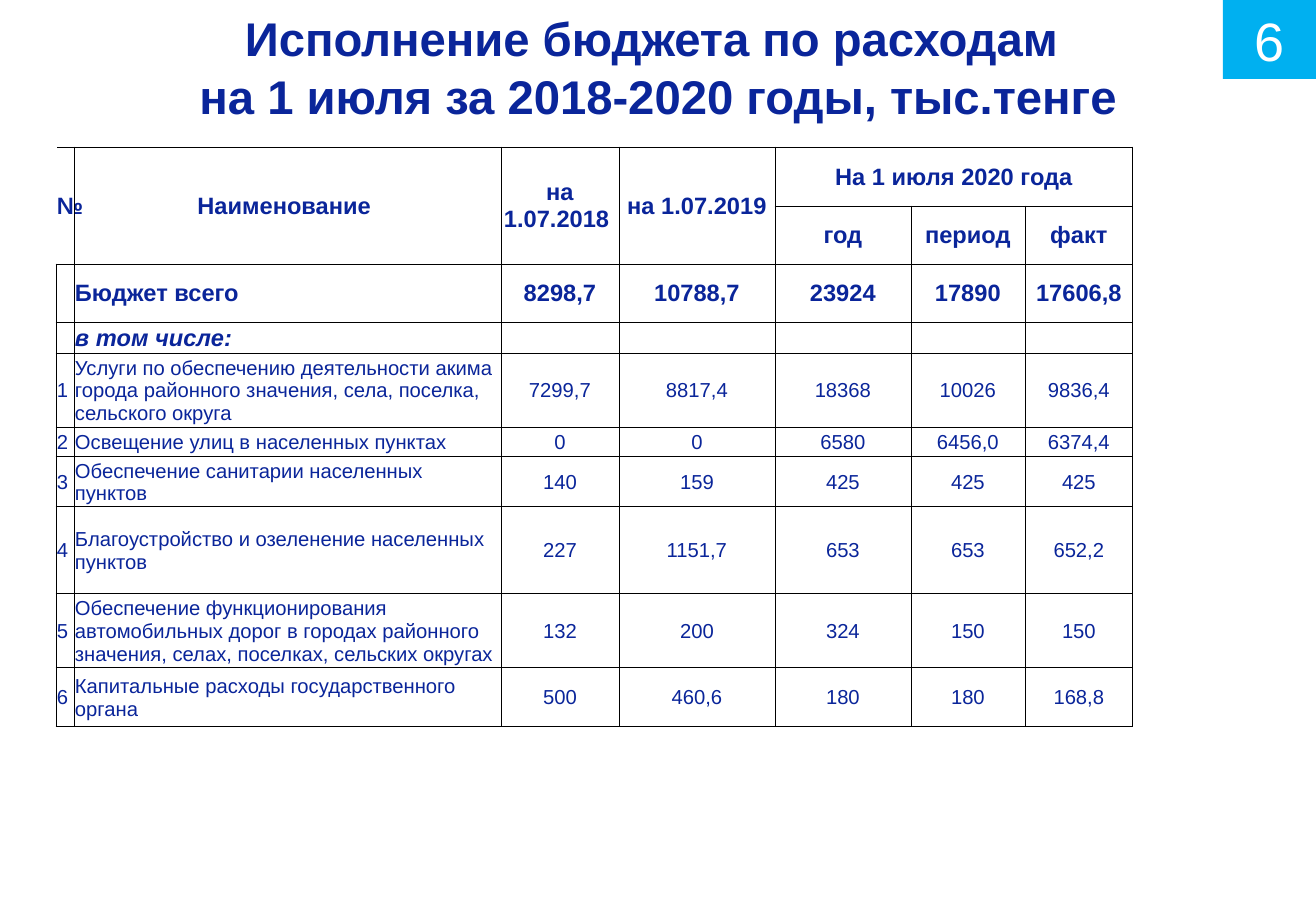
from lxml import etree
from pptx import Presentation
from pptx import util as u
from pptx.dml.color import RGBColor
from pptx.enum import shapes, text
from pptx.oxml.ns import qn

PX = 7526
FONT = "Arial"
COLORS = {"navy": "0A259A", "cyan": "00B0F0", "white": "FFFFFF", "black": "000000"}
COLS = [18, 427, 118, 156, 136, 114, 108]
ROWS = [59, 58, 58, 31, 75, 29, 50, 87, 74, 59]
HEADER_ROWS = 2
BOLD_ROWS = 4
SUBTITLE_ROW = 3
MERGES = [(0, c, 1, c) for c in range(4)] + [(0, 4, 0, 6)]
BUDGET = [
    ["№", "Наименование ", "на 1.07.2018 ", "на 1.07.2019", "На 1 июля 2020 года", "", ""],
    ["", "", "", "", "год", "период", "факт"],
    ["", "Бюджет всего", "8298,7", "10788,7", "23924", "17890", "17606,8"],
    ["", "в том числе:", "", "", "", "", ""],
    ["1", "Услуги по обеспечению деятельности акима города районного значения, села, поселка, "
     "сельского округа", "7299,7", "8817,4", "18368", "10026", "9836,4"],
    ["2", "Освещение улиц в населенных пунктах", "0", "0", "6580", "6456,0", "6374,4"],
    ["3", "Обеспечение санитарии населенных пунктов", "140", "159", "425", "425", "425"],
    ["4", "Благоустройство и озеленение населенных пунктов",
     "227", "1151,7", "653", "653", "652,2"],
    ["5", "Обеспечение функционирования автомобильных дорог в городах районного значения, "
     "селах, поселках, сельских округах", "132", "200", "324", "150", "150"],
    ["6", "Капитальные расходы государственного органа", "500", "460,6", "180", "180", "168,8"],
]


def px(*values):
    return [u.Emu(v * PX) for v in values]


def rgb(name):
    return RGBColor.from_string(COLORS[name])


def style(p, size, color, bold=False, italic=False, centered=True):
    p.alignment = text.PP_ALIGN.CENTER if centered else text.PP_ALIGN.LEFT
    f = p.font
    f.name, f.size, f.bold, f.italic = FONT, u.Pt(size), bold, italic
    f.color.rgb = rgb(color)


def add_title(s, lines):
    tf = s.shapes.add_textbox(*px(0, 0, 1316, 140)).text_frame
    tf.word_wrap = True
    tf.margin_left, tf.margin_top, tf.margin_right, tf.margin_bottom = px(6, 9, 6, 6)
    for i, line in enumerate(lines):
        p = tf.add_paragraph() if i else tf.paragraphs[0]
        p.text = line
        p.line_spacing = u.Pt(34)
        style(p, 28, "navy", bold=True)


def add_badge(s, number):
    sp = s.shapes.add_shape(shapes.MSO_SHAPE.RECTANGLE, *px(1223, 0, 93, 79))
    sp.shadow.inherit = False
    sp.fill.solid()
    sp.fill.fore_color.rgb = rgb("cyan")
    sp.line.fill.background()
    tf = sp.text_frame
    tf.vertical_anchor = text.MSO_ANCHOR.MIDDLE
    p = tf.paragraphs[0]
    p.text = number
    style(p, 32, "white")


def set_borders(cell, sides):
    tcPr = cell._tc.get_or_add_tcPr()
    for i, side in enumerate(sides):
        ln = etree.Element(qn(f"a:ln{side}"), w=str(u.Pt(0.5)))
        fill = etree.SubElement(ln, qn("a:solidFill"))
        etree.SubElement(fill, qn("a:srgbClr"), val=COLORS["black"])
        tcPr.insert(i, ln)


def fill_cell(cell, value, row, col):
    cell.fill.background()
    cell.vertical_anchor = text.MSO_ANCHOR.MIDDLE
    cell.margin_left, cell.margin_top, cell.margin_right, cell.margin_bottom = px(1, 1, 1, 0)
    p = cell.text_frame.paragraphs[0]
    size = 14 if row < BOLD_ROWS else 12
    if value:
        p.text = value
    style(p, size, "navy", bold=row < BOLD_ROWS, italic=row == SUBTITLE_ROW,
          centered=row < HEADER_ROWS or col > 1)
    if not value:
        etree.SubElement(p._p, qn("a:endParaRPr"), sz=str(size * 100))
    set_borders(cell, "RTB" if col == 0 and row < HEADER_ROWS else "LRTB")


def add_budget_table(s):
    frame = s.shapes.add_table(len(ROWS), len(COLS), *px(56, 147, sum(COLS), sum(ROWS)))
    table = frame.table
    table.first_row = table.horz_banding = False
    for column, width in zip(table.columns, px(*COLS)):
        column.width = width
    for row, height in zip(table.rows, px(*ROWS)):
        row.height = height
    for r, values in enumerate(BUDGET):
        for c, value in enumerate(values):
            fill_cell(table.cell(r, c), value, r, c)
    for top, left, bottom, right in MERGES:
        table.cell(top, left).merge(table.cell(bottom, right))


def main():
    prs = Presentation()
    prs.slide_width, prs.slide_height = px(1316, 911)
    s = prs.slides.add_slide(prs.slide_layouts[6])
    add_title(s, ["Исполнение бюджета по расходам ", "на 1 июля за 2018-2020 годы, тыс.тенге"])
    add_budget_table(s)
    add_badge(s, "6")
    prs.save("out.pptx")


if __name__ == "__main__":
    main()
